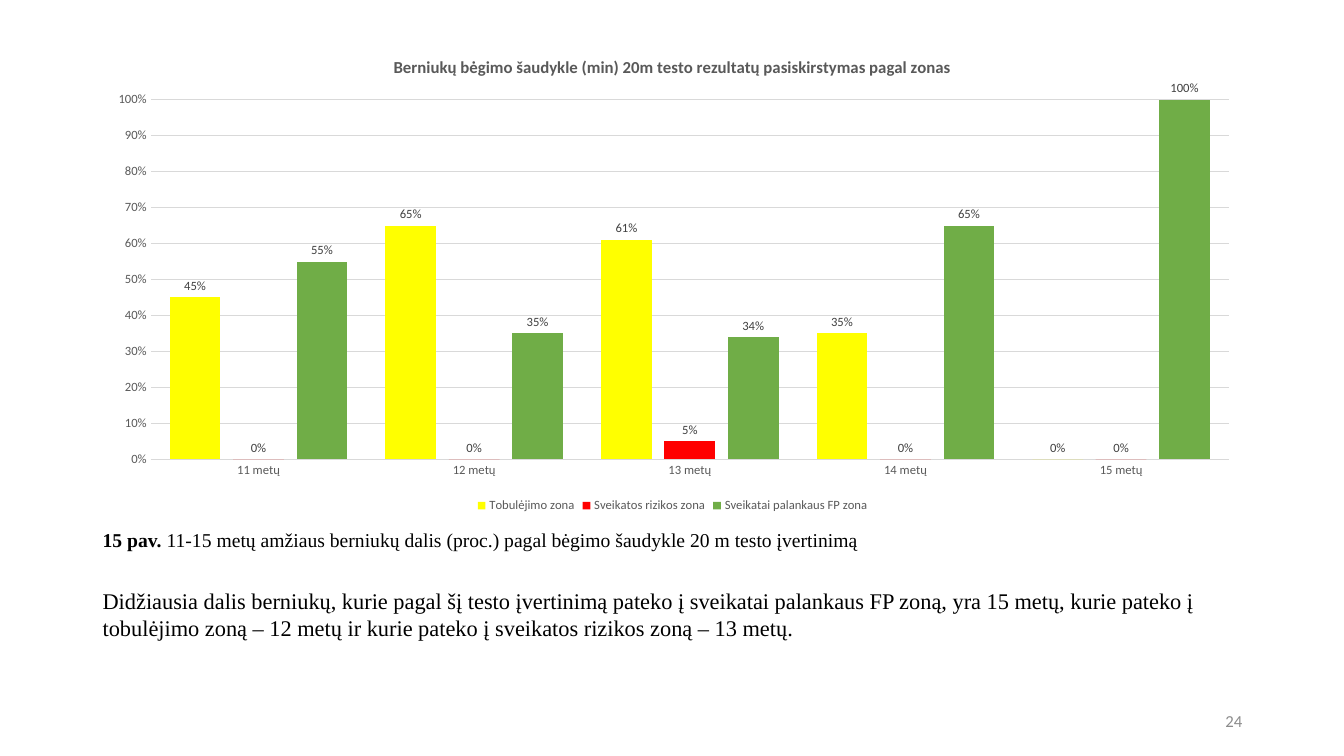
from dataclasses import dataclass

from lxml import etree
from pptx import Presentation
from pptx.chart.data import CategoryChartData
from pptx.dml.color import RGBColor
from pptx.enum import chart as kinds, text
from pptx.oxml import ns
from pptx.util import Inches, Pt


@dataclass(frozen=True)
class Theme:
    serif: str = "Times New Roman"
    sans: str = "Calibri"
    ink: str = "000000"
    axis: str = "595959"
    label: str = "404040"
    grid: str = "D9D9D9"
    muted: str = "8C8C8C"
    improve: str = "FFFF00"
    risk: str = "FF0000"
    healthy: str = "70AD47"
    small: float = 9
    page_number: float = 12
    chart_title: float = 12
    caption: float = 14
    body: float = 16


class SlideBuilder:
    def __init__(self, deck, theme):
        self.theme = theme
        self.page = deck.slides.add_slide(deck.slide_layouts[6])

    def style(self, font, size, color, name=None, bold=None):
        font.size = Pt(size)
        font.name = name or self.theme.sans
        font.color.rgb = RGBColor.from_string(color)
        font.bold = bold

    def line(self, line_format):
        line_format.color.rgb = RGBColor.from_string(self.theme.grid)
        line_format.width = Pt(0.75)

    def text(self, place, spans, size, color, font, align=text.PP_ALIGN.LEFT,
             anchor=text.MSO_ANCHOR.MIDDLE, spacing=1.0):
        """Add one paragraph; spans are (wording, bold) pairs."""
        box = self.page.shapes.add_textbox(*map(Inches, place))
        frame = box.text_frame
        frame.word_wrap = True
        frame.vertical_anchor = anchor
        para = frame.paragraphs[0]
        para.alignment = align
        para.line_spacing = spacing
        self.style(para.font, size, color, font)
        for wording, bold in spans:
            span = para.add_run()
            span.text = wording
            if bold:
                span.font.bold = True

    def column_chart(self, place, title, categories, series, plot_area):
        """Add a percentage chart; series are (name, values, colour) triples."""
        theme = self.theme
        data = CategoryChartData(number_format="0%")
        data.categories = categories
        for name, values, _ in series:
            data.add_series(name, values)
        chart = self.page.shapes.add_chart(
            kinds.XL_CHART_TYPE.COLUMN_CLUSTERED, *map(Inches, place), data).chart
        self.style(chart.font, theme.small, theme.axis)

        chart.has_title = True
        heading = chart.chart_title.text_frame
        heading.text = title
        self.style(heading.paragraphs[0].font, theme.chart_title, theme.axis, bold=True)
        chart.chart_title.include_in_layout = False

        chart.has_legend = True
        chart.legend.position = kinds.XL_LEGEND_POSITION.BOTTOM
        chart.legend.include_in_layout = False
        self.style(chart.legend.font, theme.small, theme.axis)

        plot = chart.plots[0]
        plot.gap_width = 75
        plot.overlap = -25
        plot.vary_by_categories = False
        for column, (_, _, color) in zip(plot.series, series):
            column.format.fill.solid()
            column.format.fill.fore_color.rgb = RGBColor.from_string(color)
            labels = column.data_labels
            labels.show_value = True
            labels.position = kinds.XL_LABEL_POSITION.OUTSIDE_END
            labels.number_format = "0%"
            labels.number_format_is_linked = False
            self.style(labels.font, theme.small, theme.label)

        for axis in (chart.category_axis, chart.value_axis):
            axis.major_tick_mark = axis.minor_tick_mark = kinds.XL_TICK_MARK.NONE
            self.style(axis.tick_labels.font, theme.small, theme.axis)
        self.line(chart.category_axis.format.line)
        scale = chart.value_axis
        scale.minimum_scale, scale.maximum_scale, scale.major_unit = 0, 1, 0.1
        scale.format.line.fill.background()
        scale.tick_labels.number_format = "0%"
        scale.tick_labels.number_format_is_linked = False
        self.line(scale.major_gridlines.format.line)
        self.fix_plot_area(chart, plot_area)

    @staticmethod
    def fix_plot_area(chart, fractions):
        """Pin the inner plot area to x, y, w, h as fractions of the chart."""
        area = chart.element.find(".//" + ns.qn("c:plotArea"))
        for old in area.findall(ns.qn("c:layout")):
            area.remove(old)
        layout = etree.Element(ns.qn("c:layout"))
        manual = etree.SubElement(layout, ns.qn("c:manualLayout"))
        settings = [("layoutTarget", "inner"), ("xMode", "edge"), ("yMode", "edge")]
        for tag, value in settings + list(zip("xywh", fractions)):
            etree.SubElement(manual, ns.qn("c:" + tag), val=str(value))
        area.insert(0, layout)


def main():
    deck = Presentation()
    deck.slide_width, deck.slide_height = Inches(13.33), Inches(7.5)
    theme = Theme()
    slide = SlideBuilder(deck, theme)
    left, width = 0.92, 11.5

    slide.text(
        (left, 5.15, width, 0.43),
        [("15 pav. ", True),
         ("11-15 metų amžiaus berniukų dalis (proc.) pagal bėgimo šaudykle "
          "20 m testo įvertinimą", False)],
        theme.caption, theme.ink, theme.serif, spacing=0.9)
    slide.column_chart(
        (left, 0.37, width, 4.76),
        "Berniukų bėgimo šaudykle (min) 20m testo rezultatų pasiskirstymas pagal zonas",
        [f"{age} metų" for age in range(11, 16)],
        [("Tobulėjimo zona", (0.45, 0.65, 0.61, 0.35, 0), theme.improve),
         ("Sveikatos rizikos zona", (0, 0, 0.05, 0, 0), theme.risk),
         ("Sveikatai palankaus FP zona", (0.55, 0.35, 0.34, 0.65, 1), theme.healthy)],
        plot_area=(0.05, 0.13, 0.93, 0.75))
    slide.text((9.42, 6.95, 3, 0.4), [("24", False)], theme.page_number,
               theme.muted, theme.sans, align=text.PP_ALIGN.RIGHT)
    slide.text(
        (left, 5.78, width, 0.64),
        [("Didžiausia dalis berniukų, kurie pagal šį testo įvertinimą pateko į "
          "sveikatai palankaus FP zoną, yra 15 metų, kurie pateko į tobulėjimo "
          "zoną – 12 metų ir kurie pateko į sveikatos rizikos zoną – 13 metų.", False)],
        theme.body, theme.ink, theme.serif, anchor=text.MSO_ANCHOR.TOP)
    deck.save("out.pptx")


if __name__ == "__main__":
    main()
